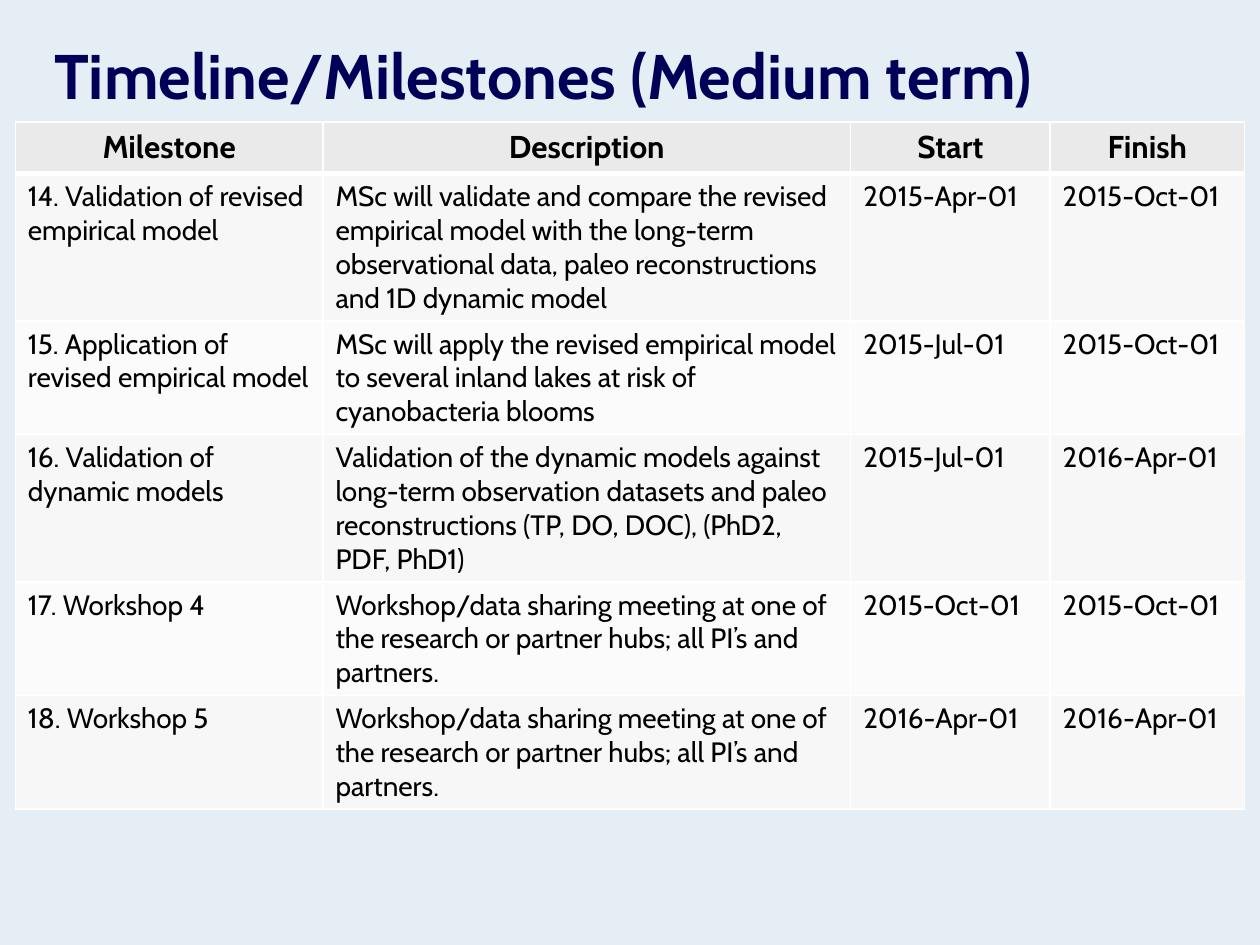
from lxml import etree
from pptx import Presentation
from pptx.dml.color import RGBColor
from pptx.enum.text import MSO_ANCHOR, PP_ALIGN
from pptx.oxml.ns import qn
from pptx.util import Cm, Pt

MIDDLE = MSO_ANCHOR.MIDDLE
LEFT, CENTER = PP_ALIGN.LEFT, PP_ALIGN.CENTER
FONT = "Cabin"
SKY = RGBColor(0xE4, 0xEE, 0xF4)
NAVY = RGBColor(0x00, 0x00, 0x58)
BLACK = RGBColor(0x00, 0x00, 0x00)
WHITE = RGBColor(0xFF, 0xFF, 0xFF)
HEADER_GREY = RGBColor(0xEA, 0xEA, 0xEA)
BANDS = [RGBColor(0xF7, 0xF7, 0xF7), RGBColor(0xFB, 0xFB, 0xFB)]

COL_WIDTHS = [6.2, 10.64, 4.02, 3.92]
HEADER_HEIGHT = 1.04
LINE_HEIGHT, ROW_PADDING = 0.68, 0.25
WORKSHOP = ("Workshop/data sharing meeting at one of the research or partner "
            "hubs; all PI’s and partners.")
HEADERS = ["Milestone", "Description", "Start", "Finish"]
MILESTONES = [
    (4, "14. Validation of revised empirical model",
     "MSc will validate and compare the revised empirical model with the long-term "
     "observational data, paleo reconstructions and 1D dynamic model",
     "2015-Apr-01", "2015-Oct-01"),
    (3, "15. Application of revised empirical model",
     "MSc will apply the revised empirical model to several inland lakes at risk of "
     "cyanobacteria blooms",
     "2015-Jul-01", "2015-Oct-01"),
    (4, "16. Validation of dynamic models",
     "Validation of the dynamic models against long-term observation datasets and "
     "paleo reconstructions (TP, DO, DOC), (PhD2, PDF, PhD1)",
     "2015-Jul-01", "2016-Apr-01"),
    (3, "17. Workshop 4", WORKSHOP, "2015-Oct-01", "2015-Oct-01"),
    (3, "18. Workshop 5", WORKSHOP, "2016-Apr-01", "2016-Apr-01"),
]


def write(tf, text, size, color, bold=False, align=LEFT):
    """Put one styled run in the first paragraph of a text frame."""
    p = tf.paragraphs[0]
    p.alignment = align
    r = p.add_run()
    r.text = text
    r.font.name = FONT
    r.font.size = Pt(size)
    r.font.bold = bold
    r.font.color.rgb = color


def set_borders(cell, top=1, bottom=1):
    """Draw white lines around a cell, with widths in points."""
    tc_pr = cell._tc.get_or_add_tcPr()
    edges = [("a:lnL", 1), ("a:lnR", 1), ("a:lnT", top), ("a:lnB", bottom)]
    for i, (tag, width) in enumerate(edges):
        ln = etree.Element(qn(tag), w=str(Pt(width)))
        fill = etree.SubElement(ln, qn("a:solidFill"))
        etree.SubElement(fill, qn("a:srgbClr"), val=str(WHITE))
        tc_pr.insert(i, ln)


def add_title(s, left, top, width, height):
    """Add the slide heading in the given box."""
    sp = s.shapes.add_textbox(left, top, width, height)
    tf = sp.text_frame
    tf.word_wrap = True
    tf.vertical_anchor = MIDDLE
    write(tf, "Timeline/Milestones (Medium term)", 36, NAVY, bold=True)


def add_milestones(s, left, top, width):
    """Add the milestone table, with its columns scaled to the given width."""
    heights = [HEADER_HEIGHT] + [n * LINE_HEIGHT + ROW_PADDING for n, *_ in MILESTONES]
    rows = [HEADERS] + [texts for _, *texts in MILESTONES]
    table = s.shapes.add_table(len(rows), len(HEADERS), left, top, width,
                               Cm(sum(heights))).table
    for col, share in zip(table.columns, COL_WIDTHS):
        col.width = int(width * share / sum(COL_WIDTHS))
    for i, (texts, height) in enumerate(zip(rows, heights)):
        table.rows[i].height = Cm(height)
        header = i == 0
        for cell, text in zip(table.rows[i].cells, texts):
            cell.fill.solid()
            cell.fill.fore_color.rgb = HEADER_GREY if header else BANDS[(i - 1) % 2]
            set_borders(cell, top=3 if i == 1 else 1, bottom=3 if header else 1)
            write(cell.text_frame, text, 18 if header else 16, BLACK, header,
                  CENTER if header else LEFT)


def main():
    """Build the slide and save it."""
    prs = Presentation()
    prs.slide_width, prs.slide_height = Cm(25.4), Cm(19.05)
    s = prs.slides.add_slide(prs.slide_layouts[6])
    s.background.fill.solid()
    s.background.fill.fore_color.rgb = SKY
    add_title(s, Cm(0.85), Cm(0.64), Cm(23.93), Cm(1.7))
    add_milestones(s, Cm(0.31), Cm(2.46), Cm(24.78))
    prs.save("out.pptx")


if __name__ == "__main__":
    main()
